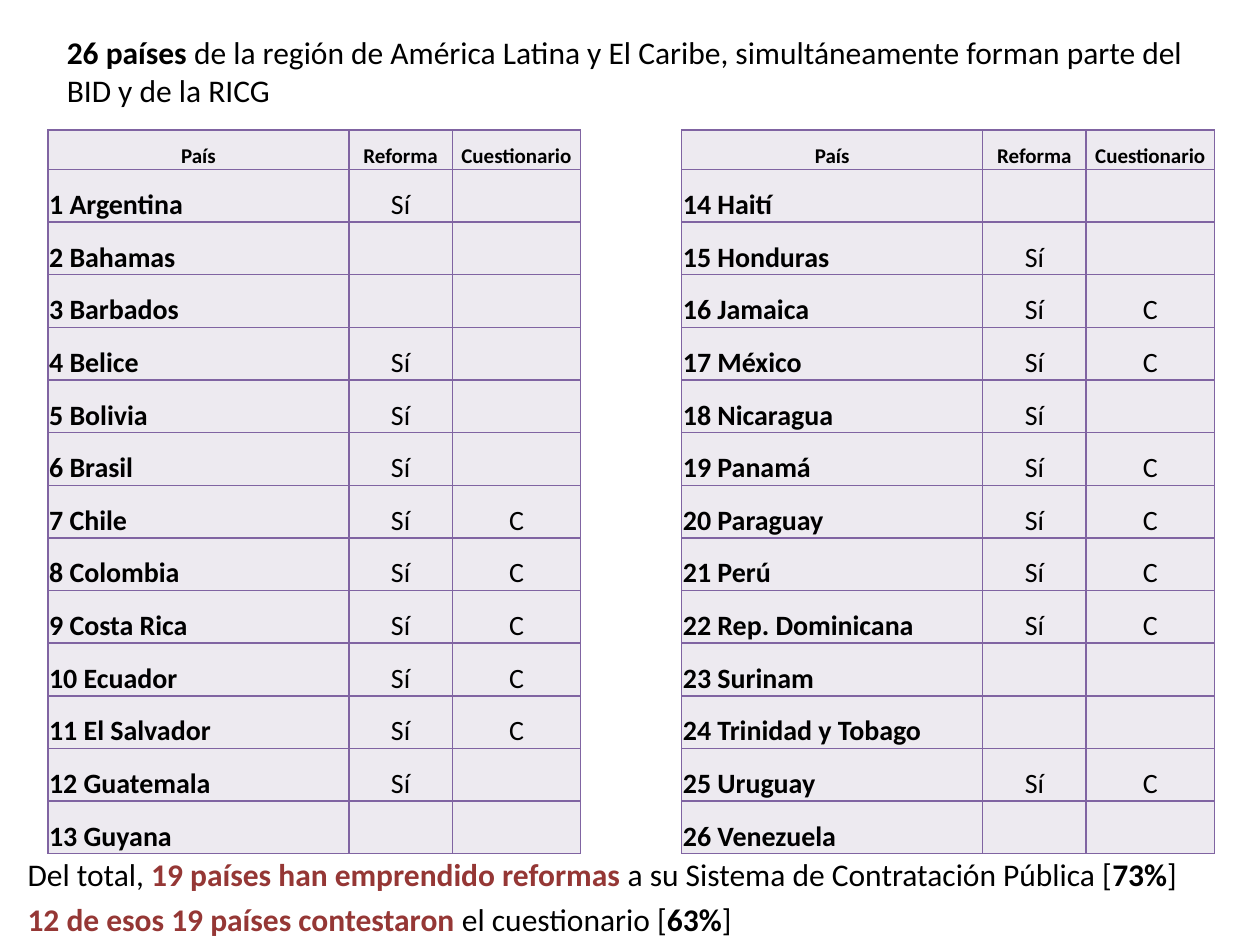
import pptx
import pptx.dml.color
import pptx.enum.text
import pptx.oxml
import pptx.oxml.ns
import pptx.util
from pptx.util import Inches

BLACK = pptx.dml.color.RGBColor(0x00, 0x00, 0x00)
RED = pptx.dml.color.RGBColor(0x95, 0x37, 0x35)
LILAC = pptx.dml.color.RGBColor(0xED, 0xEA, 0xF0)
PURPLE = pptx.dml.color.RGBColor(0x80, 0x64, 0xA2)
FONT = "Calibri"

HEADERS = ["País", "Reforma", "Cuestionario"]
COUNTRIES = [
    "Argentina", "Bahamas", "Barbados", "Belice", "Bolivia", "Brasil", "Chile",
    "Colombia", "Costa Rica", "Ecuador", "El Salvador", "Guatemala", "Guyana",
    "Haití", "Honduras", "Jamaica", "México", "Nicaragua", "Panamá", "Paraguay",
    "Perú", "Rep. Dominicana", "Surinam", "Trinidad y Tobago", "Uruguay", "Venezuela",
]
NO_REFORM = {2, 3, 13, 14, 23, 24, 26}
ANSWERED = {7, 8, 9, 10, 11, 16, 17, 19, 20, 21, 22, 25}
COL_WIDTHS = [2.39, 0.82, 1.02]
HEADER_HEIGHT, ROW_HEIGHT = 0.31, 0.41


def add_run(p, text, size, bold=False, color=BLACK):
    """Append one formatted run to a paragraph."""
    r = p.add_run()
    r.text = text
    r.font.name = FONT
    r.font.size = pptx.util.Pt(size)
    r.font.bold = bold
    r.font.color.rgb = color


def add_heading(s, left, top, width, height):
    """Place the heading in the title placeholder."""
    sp = s.shapes.title
    sp.left, sp.top, sp.width, sp.height = map(Inches, (left, top, width, height))
    tf = sp.text_frame
    tf.word_wrap = True
    tf.auto_size = pptx.enum.text.MSO_AUTO_SIZE.NONE
    tf.vertical_anchor = pptx.enum.text.MSO_ANCHOR.TOP
    p = tf.paragraphs[0]
    p.alignment = pptx.enum.text.PP_ALIGN.LEFT
    add_run(p, "26 países ", 18, bold=True)
    add_run(p, "de la región de América Latina y El Caribe, simultáneamente "
               "forman parte del BID y de la RICG", 18)


def add_borders(cell):
    """Draw a thin purple line on all four sides of a cell."""
    props = cell._tc.get_or_add_tcPr()
    for i, side in enumerate(("lnL", "lnR", "lnT", "lnB")):
        props.insert(i, pptx.oxml.parse_xml(
            f'<a:{side} {pptx.oxml.ns.nsdecls("a")} w="{pptx.util.Pt(1)}">'
            f'<a:solidFill><a:srgbClr val="{PURPLE}"/></a:solidFill></a:{side}>'))


def format_cell(cell, text, size, bold, centered):
    """Fill, frame and write one table cell."""
    cell.fill.solid()
    cell.fill.fore_color.rgb = LILAC
    cell.vertical_anchor = pptx.enum.text.MSO_ANCHOR.MIDDLE
    cell.margin_left = cell.margin_right = cell.margin_top = Inches(0.01)
    cell.margin_bottom = 0
    add_borders(cell)
    if text:
        p = cell.text_frame.paragraphs[0]
        p.line_spacing = 1.5
        if centered:
            p.alignment = pptx.enum.text.PP_ALIGN.CENTER
        add_run(p, text, size, bold)


def add_country_table(s, left, top, numbers):
    """Build a table of the countries with the given numbers."""
    rows = [HEADERS] + [
        [f"{n} {COUNTRIES[n - 1]}",
         "" if n in NO_REFORM else "Sí",
         "C" if n in ANSWERED else ""]
        for n in numbers
    ]
    height = HEADER_HEIGHT + ROW_HEIGHT * len(numbers)
    table = s.shapes.add_table(
        len(rows), len(HEADERS), Inches(left), Inches(top),
        Inches(sum(COL_WIDTHS)), Inches(height)).table
    table.horz_banding = False
    for col, width in zip(table.columns, COL_WIDTHS):
        col.width = Inches(width)
    for i, row in enumerate(rows):
        header = i == 0
        table.rows[i].height = Inches(HEADER_HEIGHT if header else ROW_HEIGHT)
        for j, text in enumerate(row):
            format_cell(table.cell(i, j), text, 12 if header else 16,
                        bold=header or j == 0, centered=header or j > 0)


def add_summary(s, left, top, width, height):
    """Write the two closing lines with their shares."""
    lines = [
        [("Del total, ", False, BLACK),
         ("19 países han emprendido reformas ", True, RED),
         ("a su Sistema de Contratación Pública [", False, BLACK),
         ("73%", True, BLACK), ("]", False, BLACK)],
        [("12 de esos 19 países contestaron ", True, RED),
         ("el cuestionario [", False, BLACK),
         ("63%", True, BLACK), ("]", False, BLACK)],
    ]
    sp = s.shapes.add_textbox(*map(Inches, (left, top, width, height)))
    tf = sp.text_frame
    tf.word_wrap = True
    for i, line in enumerate(lines):
        p = tf.add_paragraph() if i else tf.paragraphs[0]
        p.space_before = pptx.util.Pt(3.6)
        for text, bold, color in line:
            add_run(p, text, 18, bold, color)


def main():
    """Build the slide and save it."""
    prs = pptx.Presentation()
    prs.slide_width, prs.slide_height = Inches(10), Inches(7.5)
    s = prs.slides.add_slide(prs.slide_layouts.get_by_name("Title Only"))
    add_heading(s, 0.43, 0.21, 9.22, 0.94)
    add_country_table(s, 0.38, 1.03, range(1, 14))
    add_country_table(s, 5.41, 1.03, range(14, 27))
    add_summary(s, 0.12, 6.74, 9.69, 0.94)
    prs.save("out.pptx")


if __name__ == "__main__":
    main()
